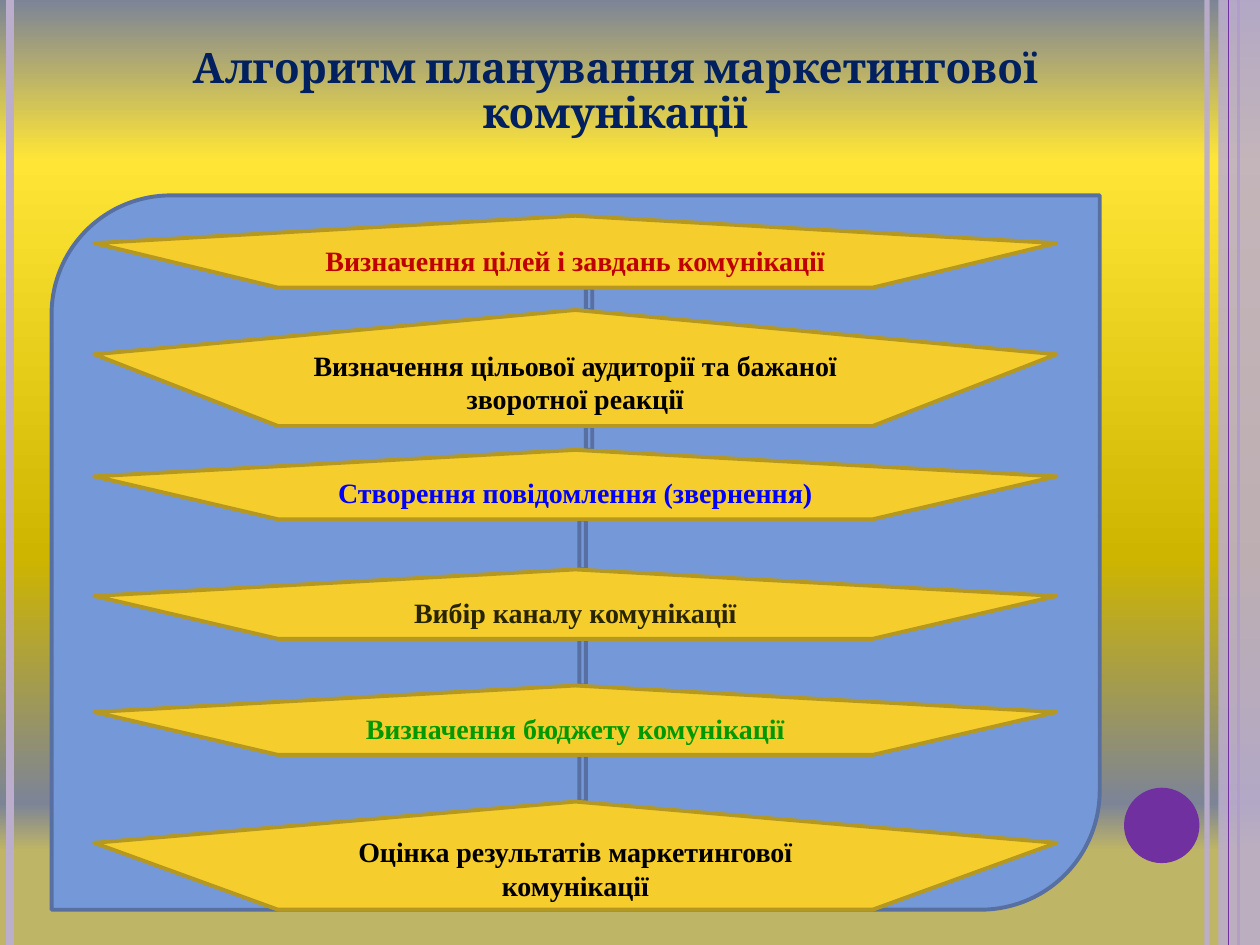
from itertools import pairwise

from lxml import etree
from pptx import Presentation
from pptx.dml.color import RGBColor
from pptx.enum.shapes import MSO_CONNECTOR, MSO_SHAPE
from pptx.enum.text import MSO_ANCHOR, PP_ALIGN
from pptx.oxml.ns import qn
from pptx.util import Cm, Pt

LINE = MSO_CONNECTOR.STRAIGHT
RECT, OVAL = MSO_SHAPE.RECTANGLE, MSO_SHAPE.OVAL
PANEL, STEP = MSO_SHAPE.ROUND_2_DIAG_RECTANGLE, MSO_SHAPE.REGULAR_PENTAGON
MIDDLE, CENTER = MSO_ANCHOR.MIDDLE, PP_ALIGN.CENTER

WIDE, HIGH = 25.4, 19.05
LILAC, PURPLE = "BBAECD", "7030A0"
BLUE, EDGE = "7598D9", "5770A1"
GOLD, RIM = "F5CD2D", "B59821"
STOPS = [(0, "BEB566"), (10, "BEB566"), (15, "7D8496"), (41, "CEB500"),
         (83, "FFE636"), (100, "7D8496")]
# text, colour, top within the panel, height
STEPS = [
    ("Визначення цілей і завдань комунікації", "C00000", 0.41, 1.45),
    ("Визначення цільової аудиторії та бажаної зворотної реакції",
     "000000", 2.31, 2.34),
    ("Створення повідомлення (звернення)", "0000FF", 5.13, 1.4),
    ("Вибір каналу комунікації", "292400", 7.54, 1.4),
    ("Визначення бюджету комунікації", "009900", 9.88, 1.4),
    ("Оцінка результатів маркетингової комунікації", "000000", 12.22, 2.18),
]


def color(code):
    return RGBColor.from_string(code)


def fade(fill, share):
    """Set the opacity of a solid fill in percent."""
    tone = fill._xPr.find(".//" + qn("a:srgbClr"))
    etree.SubElement(tone, qn("a:alpha"), val=str(share * 1000))


def write(frame, text, font, size, tint, gap=None):
    frame.word_wrap = True
    frame.vertical_anchor = MIDDLE
    par = frame.paragraphs[0]
    par.alignment = CENTER
    par.line_spacing = gap
    run = par.add_run()
    run.text = text
    run.font.name, run.font.size, run.font.bold = font, Pt(size), True
    run.font.color.rgb = color(tint)


def draw(slide, kind, box, fill, line=None):
    shape = slide.shapes.add_shape(kind, *map(Cm, box))
    shape.shadow.inherit = False
    shape.fill.solid()
    shape.fill.fore_color.rgb = color(fill)
    if line:
        shape.line.color.rgb = color(line)
        shape.line.width = Pt(2.25)
    else:
        shape.line.fill.background()
    return shape


def stripe(slide, left, tint, width):
    line = slide.shapes.add_connector(LINE, Cm(left), 0, Cm(left), Cm(HIGH))
    line.line.color.rgb = color(tint)
    line.line.width = Pt(width)
    etree.SubElement(line._element.spPr, qn("a:effectLst"))
    return line


def backdrop(slide):
    fill = slide.background.fill
    fill.gradient()
    fill.gradient_angle = 90  # python-pptx counts against the clock
    stops = fill._fill._gradFill.find(qn("a:gsLst"))
    for old in list(stops):
        stops.remove(old)
    for place, tint in STOPS:
        stop = etree.SubElement(stops, qn("a:gs"), pos=str(place * 1000))
        etree.SubElement(stop, qn("a:srgbClr"), val=tint)


def frame(slide):
    # Vertical stripes at both sides, band and dot at the right
    fade(stripe(slide, 24.33, LILAC, 3).line.fill, 93)
    stripe(slide, 0.2, LILAC, 4.5)
    stripe(slide, 24.97, PURPLE, 1.5)
    band = draw(slide, RECT, (24.56, 0, WIDE - 24.56, HIGH), LILAC)
    fade(band.fill, 87)
    stripe(slide, 24.77, PURPLE, 0.75)
    draw(slide, OVAL, (22.66, 15.88, 1.52, 1.52), PURPLE)


def head(slide, box):
    title = slide.shapes.title
    title.left, title.top, title.width, title.height = map(Cm, box)
    write(title.text_frame, "Алгоритм планування маркетингової комунікації",
          font="Cambria", size=24, tint="002060", gap=0.9)
    # Bring the title in front of the side stripes
    slide.shapes._spTree.append(title._element)


def flow(slide, box):
    left, top, width, height = box
    draw(slide, PANEL, box, BLUE, EDGE)
    # Links fill the gaps between neighbouring steps
    for i, (above, below) in enumerate(pairwise(STEPS)):
        start = above[2] + above[3]
        shift = 10.77 if i < 2 else 10.64
        draw(slide, PANEL, (left + shift, top + start, 0.13, below[2] - start),
             BLUE, EDGE)
    # Steps
    for text, tint, y, tall in STEPS:
        step = draw(slide, STEP, (left + 0.86, top + y, width - 1.73, tall),
                    GOLD, RIM)
        write(step.text_frame, text, font="Times New Roman", size=16, tint=tint)


def main():
    deck = Presentation()
    deck.slide_width, deck.slide_height = Cm(WIDE), Cm(HIGH)
    slide = deck.slides.add_slide(deck.slide_layouts[5])
    backdrop(slide)
    frame(slide)
    head(slide, (1.7, 0.76, 21.41, 2.21))
    flow(slide, (1.04, 3.94, 21.13, 14.4))
    deck.save("out.pptx")


if __name__ == "__main__":
    main()
